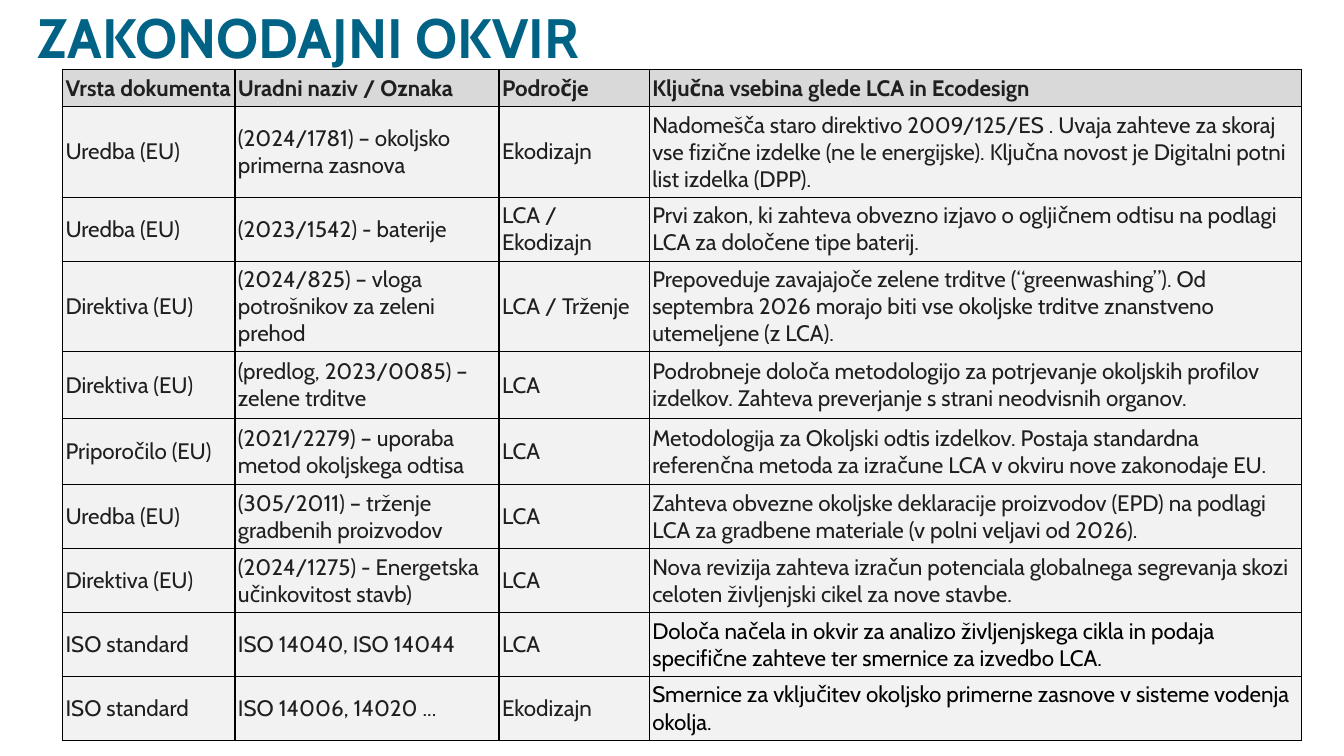
from lxml.etree import SubElement as Sub
from pptx import Presentation
from pptx.dml.color import RGBColor
from pptx.enum.text import MSO_ANCHOR as Anchor
from pptx.oxml.ns import qn
from pptx.util import Inches, Pt

FONT = "Cabin"
INK = "1F1F1F"
BLACK = "000000"
WIDTHS = [1.71, 2.62, 1.49, 6.47]
HEIGHTS = [0.29, 0.66, 0.57, 0.76, 0.66, 0.66, 0.57, 0.57, 0.57, 0.57]
ROWS = [
    ("Vrsta dokumenta", "Uradni naziv / Oznaka", "Področje",
     "Ključna vsebina glede LCA in Ecodesign"),
    ("Uredba (EU)", "(2024/1781) – okoljsko primerna zasnova", "Ekodizajn",
     "Nadomešča staro direktivo 2009/125/ES . Uvaja zahteve za skoraj vse fizične izdelke "
     "(ne le energijske). Ključna novost je Digitalni potni list izdelka (DPP)."),
    ("Uredba (EU)", "(2023/1542) - baterije", "LCA / Ekodizajn",
     "Prvi zakon, ki zahteva obvezno izjavo o ogljičnem odtisu na podlagi LCA "
     "za določene tipe baterij."),
    ("Direktiva (EU)", "(2024/825) – vloga potrošnikov za zeleni prehod", "LCA / Trženje",
     "Prepoveduje zavajajoče zelene trditve (“greenwashing”). Od septembra 2026 morajo "
     "biti vse okoljske trditve znanstveno utemeljene (z LCA)."),
    ("Direktiva (EU)", "(predlog, 2023/0085) – zelene trditve", "LCA",
     "Podrobneje določa metodologijo za potrjevanje okoljskih profilov izdelkov. "
     "Zahteva preverjanje s strani neodvisnih organov."),
    ("Priporočilo (EU)", "(2021/2279) – uporaba metod okoljskega odtisa", "LCA",
     "Metodologija za Okoljski odtis izdelkov. Postaja standardna referenčna metoda "
     "za izračune LCA v okviru nove zakonodaje EU."),
    ("Uredba (EU)", "(305/2011) – trženje gradbenih proizvodov", "LCA",
     "Zahteva obvezne okoljske deklaracije proizvodov (EPD) na podlagi LCA "
     "za gradbene materiale (v polni veljavi od 2026)."),
    ("Direktiva (EU)", "(2024/1275) - Energetska učinkovitost stavb)", "LCA",
     "Nova revizija zahteva izračun potenciala globalnega segrevanja skozi celoten "
     "življenjski cikel za nove stavbe."),
    ("ISO standard", "ISO 14040, ISO 14044", "LCA",
     "Določa načela in okvir za analizo življenjskega cikla in podaja specifične zahteve "
     "ter smernice za izvedbo LCA."),
    ("ISO standard", "ISO 14006, 14020 ...", "Ekodizajn",
     "Smernice za vključitev okoljsko primerne zasnove v sisteme vodenja okolja."),
]


def color(code):
    return RGBColor.from_string(code)


def style(para, size, code, bold):
    font = para.font
    font.name = FONT
    font.size = Pt(size)
    font.bold = bold
    font.color.rgb = color(code)


def add_title(slide, text):
    box = slide.shapes.add_textbox(Inches(0.27), Inches(0.02), Inches(12.29), Inches(0.76))
    frame = box.text_frame
    frame.word_wrap = True
    frame.vertical_anchor = Anchor.MIDDLE
    para = frame.paragraphs[0]
    para.text = text
    para.line_spacing = 0.9
    style(para, 39.6, "006385", True)


def add_edges(cell):
    props = cell._tc.get_or_add_tcPr()
    for side in ("lnL", "lnR", "lnT", "lnB"):
        line = Sub(props, qn(f"a:{side}"), w=str(Pt(1)))
        fill = Sub(line, qn("a:solidFill"))
        Sub(fill, qn("a:srgbClr"), val=BLACK)


def fill_cell(cell, text, code, head, right):
    cell.vertical_anchor = Anchor.MIDDLE
    cell.margin_left = Inches(0.03)
    cell.margin_right = Inches(right)
    cell.margin_top = cell.margin_bottom = Inches(0.05)
    add_edges(cell)
    cell.fill.solid()
    cell.fill.fore_color.rgb = color("D9D9D9" if head else "F2F2F2")
    para = cell.text_frame.paragraphs[0]
    para.text = text
    style(para, 16, code, head)


def add_grid(slide, rows):
    frame = slide.shapes.add_table(len(rows), len(WIDTHS), Inches(0.62), Inches(0.69),
                                   Inches(sum(WIDTHS)), Inches(sum(HEIGHTS)))
    table = frame.table
    for col, width in zip(table.columns, WIDTHS):
        col.width = Inches(width)
    for row, height in zip(table.rows, HEIGHTS):
        row.height = Inches(height)
    for r, texts in enumerate(rows):
        for c, text in enumerate(texts):
            last = c == len(texts) - 1
            code = BLACK if last and texts[0] == "ISO standard" else INK
            fill_cell(table.cell(r, c), text, code, r == 0, 0.03 if last else 0.04)


def main():
    deck = Presentation()
    deck.slide_width = Inches(13.33)
    deck.slide_height = Inches(7.5)
    slide = deck.slides.add_slide(deck.slide_layouts[6])
    add_title(slide, "ZAKONODAJNI OKVIR")
    add_grid(slide, ROWS)
    deck.save("out.pptx")


if __name__ == "__main__":
    main()
